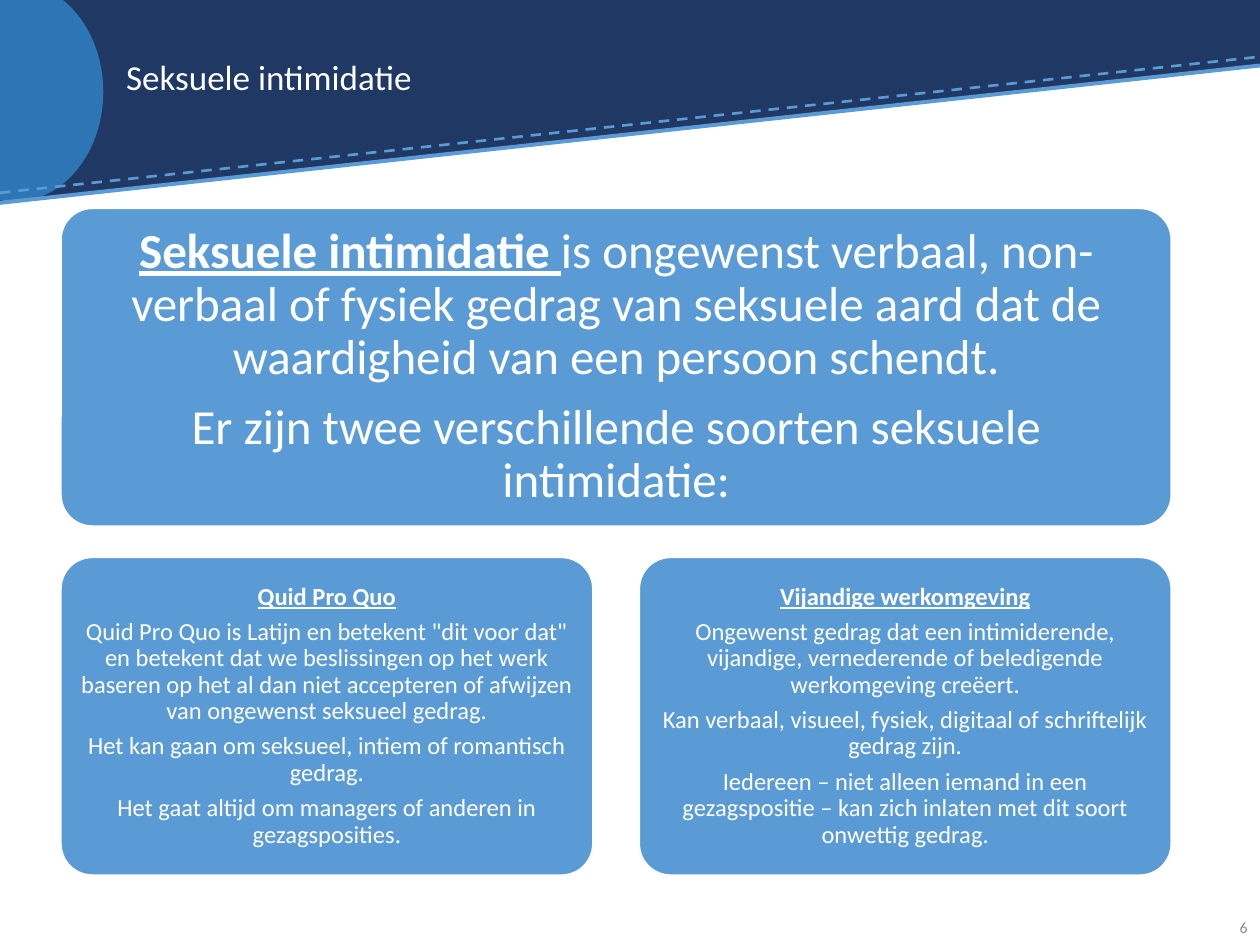
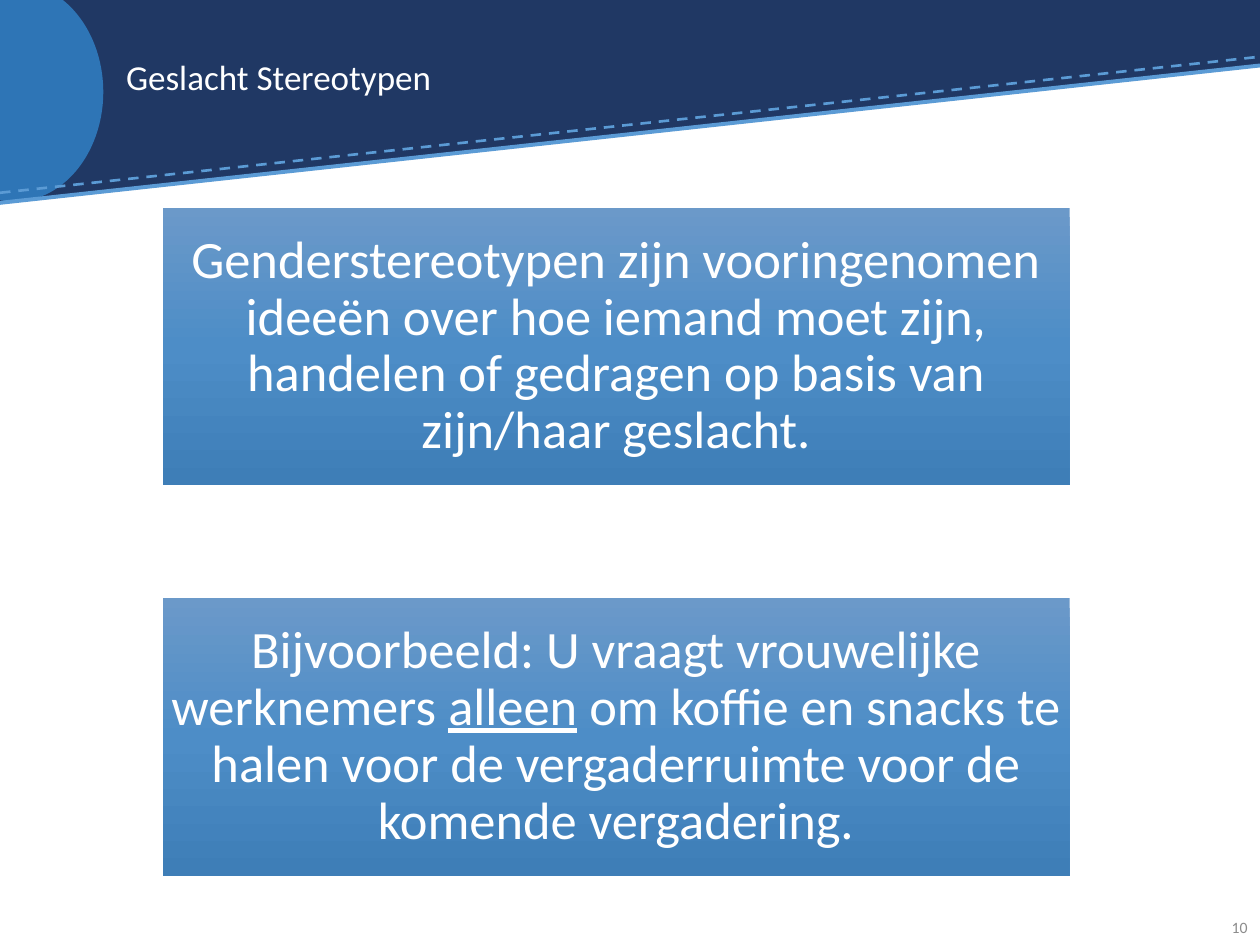
from copy import deepcopy

from pptx import Presentation
from pptx.dml.color import RGBColor
from pptx.enum.dml import MSO_LINE
from pptx.enum.shapes import MSO_CONNECTOR, MSO_SHAPE as SHAPE
from pptx.enum.text import MSO_ANCHOR as ANCHOR, MSO_AUTO_SIZE, PP_ALIGN as ALIGN
from pptx.oxml.ns import qn
from pptx.util import Inches, Pt
from lxml import etree

COLORS = {
    "navy": "203864", "disc": "2E75B6", "sky": "5B9BD5", "white": "FFFFFF",
    "grey": "8C8C8C", "top": "6B99C9", "middle": "4D8DC7", "bottom": "3E7EB7",
}
FONT = "Calibri"


def rgb(name):
    return RGBColor.from_string(COLORS[name])


class Deck:
    def __init__(self):
        self.prs = Presentation()
        self.prs.slide_width, self.prs.slide_height = Inches(10), Inches(7.5)
        self.layout = self.prs.slide_layouts[5]
        self.s = None

    def new_slide(self, title, number):
        first = self.s is None
        self.s = self.prs.slides.add_slide(self.layout)
        if first:
            self.header()
        sp = self.s.shapes.title
        sp.left, sp.top, sp.width, sp.height = map(Inches, (0.9, 0.2, 8.05, 0.86))
        self.fill_text(sp.text_frame, [[(title, "")]], 20, align=ALIGN.LEFT)
        box = self.s.shapes.add_textbox(*map(Inches, (9.47, 7.17, 0.53, 0.4)))
        self.fill_text(box.text_frame, [[(number, "")]], 9, "grey", ALIGN.RIGHT)

    def header(self):
        """Draw the band once and move it to the layout that the slides share."""
        band = [self.shape(SHAPE.RECTANGLE, 0, 0, 10, 0.52, "navy")]
        wedge = self.shape(SHAPE.RIGHT_TRIANGLE, 0, 0.51, 10, 1.09, "navy")
        wedge.element.spPr.get_or_add_xfrm().set("flipV", "1")
        band += [wedge,
                 self.shape(SHAPE.OVAL, -0.59, -0.14, 1.41, 1.74, "disc"),
                 self.line(1.53, 0.45, 1.5, MSO_LINE.DASH),
                 self.line(1.61, 0.52, 2.25)]
        for shape_id, sp in enumerate(band, 100):
            next(sp.element.iter(qn("p:cNvPr"))).set("id", str(shape_id))
            self.layout.shapes.element.append(sp.element)

    def shape(self, kind, x, y, w, h, fill=None):
        sp = self.s.shapes.add_shape(kind, *map(Inches, (x, y, w, h)))
        sp.shadow.inherit = False
        sp.line.fill.background()
        if fill:
            sp.fill.solid()
            sp.fill.fore_color.rgb = rgb(fill)
        return sp

    def line(self, y1, y2, width, dash=None):
        """Draw a line across the whole slide."""
        ln = self.s.shapes.add_connector(
            MSO_CONNECTOR.STRAIGHT, *map(Inches, (0, y1, 10, y2)))
        ln.line.color.rgb = rgb("sky")
        ln.line.width = Pt(width)
        if dash:
            ln.line.dash_style = dash
        etree.SubElement(ln.element.spPr, qn("a:effectLst"))
        return ln

    def fill_text(self, tf, paragraphs, size, color="white", align=ALIGN.CENTER,
                  inset=None):
        """Fill a frame with paragraphs of (text, style); style holds b and u."""
        tf.word_wrap = True
        tf.auto_size = MSO_AUTO_SIZE.NONE
        tf.vertical_anchor = ANCHOR.MIDDLE
        if inset is not None:
            tf.margin_left = tf.margin_right = Inches(inset)
            tf.margin_top = tf.margin_bottom = Inches(inset)
        for i, runs in enumerate(paragraphs):
            p = tf.add_paragraph() if i else tf.paragraphs[0]
            p.alignment = align
            p.line_spacing = 0.9
            p.space_after = Pt(0.35 * size)
            for text, style in runs:
                r = p.add_run()
                r.text = text
                r.font.name, r.font.size = FONT, Pt(size)
                r.font.bold, r.font.underline = "b" in style, "u" in style
                r.font.color.rgb = rgb(color)

    def card(self, x, y, w, paragraphs, size, inset):
        sp = self.shape(SHAPE.ROUNDED_RECTANGLE, x, y, w, 2.53, "sky")
        sp.adjustments[0] = 0.1
        sp.line.color.rgb = rgb("white")
        sp.line.width = Pt(1.5)
        self.fill_text(sp.text_frame, paragraphs, size, inset=inset)

    def gradient_panel(self, y, runs):
        sp = self.shape(SHAPE.RECTANGLE, 1.29, y, 7.2, 2.2)
        sp.fill.gradient()
        sp.fill.gradient_angle = 270
        stops = next(sp.element.iter(qn("a:gsLst")))
        stops.append(deepcopy(stops[0]))
        for stop, pos, name in zip(sp.fill.gradient_stops, (0, 0.5, 1),
                                   ("top", "middle", "bottom")):
            stop.position = pos
            stop.color.rgb = rgb(name)
        self.fill_text(sp.text_frame, [runs], 30, inset=0.02)


def harassment_slide(deck):
    deck.new_slide("Seksuele intimidatie", "6")
    deck.card(0.48, 1.65, 8.82, [
        [("Seksuele intimidatie ", "bu"),
         ("is ongewenst verbaal, non-verbaal of fysiek gedrag van seksuele aard "
          "dat de waardigheid van een persoon schendt.", "")],
        [("Er zijn twee verschillende soorten seksuele intimidatie:", "")],
    ], 28, 0.12)
    kinds = [
        ("Quid Pro Quo",
         'Quid Pro Quo is Latijn en betekent "dit voor dat" en betekent dat we '
         "beslissingen op het werk baseren op het al dan niet accepteren of "
         "afwijzen van ongewenst seksueel gedrag.",
         "Het kan gaan om seksueel, intiem of romantisch gedrag.",
         "Het gaat altijd om managers of anderen in gezagsposities."),
        ("Vijandige werkomgeving",
         "Ongewenst gedrag dat een intimiderende, vijandige, vernederende of "
         "beledigende werkomgeving creëert.",
         "Kan verbaal, visueel, fysiek, digitaal of schriftelijk gedrag zijn.",
         "Iedereen – niet alleen iemand in een gezagspositie – kan zich inlaten "
         "met dit soort onwettig gedrag."),
    ]
    for i, (heading, *body) in enumerate(kinds):
        paragraphs = [[(heading, "bu")]] + [[(text, "")] for text in body]
        deck.card(0.48 + i * 4.59, 4.42, 4.23, paragraphs, 14, 0.06)


def stereotypes_slide(deck):
    deck.new_slide("Geslacht Stereotypen", "10")
    deck.gradient_panel(1.65, [
        ("Genderstereotypen zijn vooringenomen ideeën over hoe iemand moet zijn, "
         "handelen of gedragen op basis van zijn/haar geslacht.", "")])
    deck.gradient_panel(4.75, [
        ("Bijvoorbeeld: U vraagt vrouwelijke werknemers ", ""),
        ("alleen", "u"),
        (" om koffie en snacks te halen voor de vergaderruimte voor de komende "
         "vergadering.", "")])


def main():
    deck = Deck()
    harassment_slide(deck)
    stereotypes_slide(deck)
    deck.prs.save("out.pptx")


if __name__ == "__main__":
    main()
